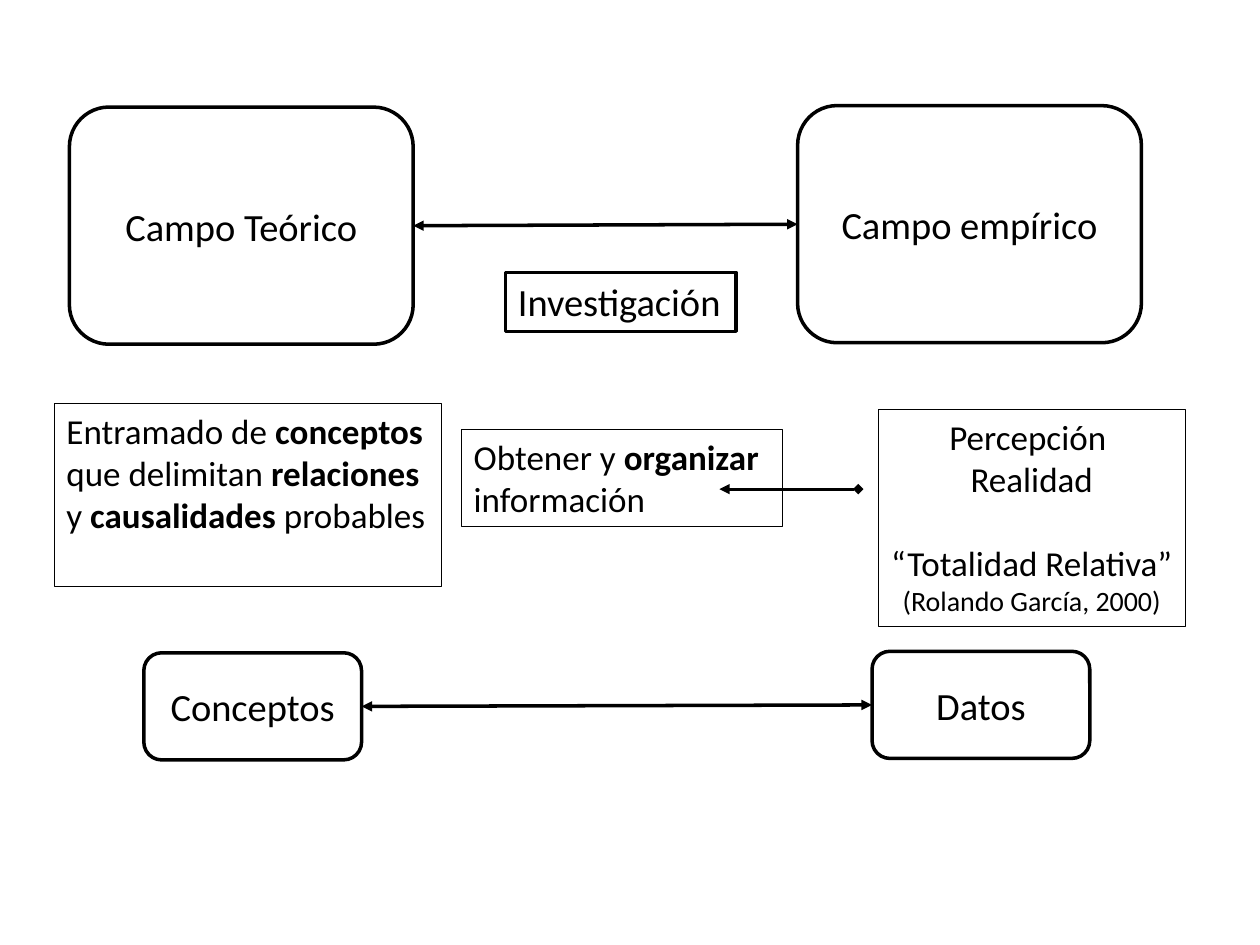
from lxml import etree
from pptx import Presentation, util as u
from pptx.dml.color import RGBColor
from pptx.enum import shapes, text
from pptx.oxml.ns import qn

COLORS = {"ink": "000000", "paper": "FFFFFF"}
FONT = "Calibri"
LEFT, CENTER = text.PP_ALIGN.LEFT, text.PP_ALIGN.CENTER


def rgb(name):
    return RGBColor.from_string(COLORS[name])


def apply(target, values):
    for name, value in values.items():
        setattr(target, name, value)


class Diagram:
    def __init__(self, s):
        self.s = s

    def box(self, kind, at, paragraphs, size, line=2, filled=True,
            align=CENTER, anchor=text.MSO_ANCHOR.TOP):
        sp = self.s.shapes.add_shape(kind, *(u.Cm(v) for v in at))
        sp.shadow.inherit = False
        if filled:
            sp.fill.solid()
            sp.fill.fore_color.rgb = rgb("paper")
        else:
            sp.fill.background()
        sp.line.color.rgb = rgb("ink")
        sp.line.width = u.Pt(line)
        tf = sp.text_frame
        apply(tf, {"word_wrap": True, "vertical_anchor": anchor})
        if align == LEFT:
            tf.margin_right = 0
        for i, runs in enumerate(paragraphs):
            p = tf.add_paragraph() if i else tf.paragraphs[0]
            p.alignment = align
            for content, bold in runs:
                r = p.add_run()
                r.text = content
                apply(r.font, {"name": FONT, "size": u.Pt(size), "bold": bold})
                r.font.color.rgb = rgb("ink")
        return sp

    def field(self, at, label):
        return self.box(shapes.MSO_SHAPE.ROUNDED_RECTANGLE, at, [[(label, False)]],
                        22, anchor=text.MSO_ANCHOR.MIDDLE)

    def note(self, at, paragraphs, align=LEFT):
        return self.box(shapes.MSO_SHAPE.RECTANGLE, at, paragraphs, 20,
                        line=0.25, filled=False, align=align)

    def arrow(self, start, end, width=2, head="triangle"):
        c = self.s.shapes.add_connector(
            shapes.MSO_CONNECTOR.STRAIGHT, *(u.Cm(v) for v in start + end))
        c.line.color.rgb = rgb("ink")
        c.line.width = u.Pt(width)
        ln = c.line._get_or_add_ln()
        for tag, kind in (("a:headEnd", head), ("a:tailEnd", "triangle")):
            etree.SubElement(ln, qn(tag), type=kind)
        etree.SubElement(c._element.spPr, qn("a:effectLst"))
        return c

    def link(self, left, right):
        c = self.arrow((0, 0), (1, 1))
        c.begin_connect(left, 3)
        c.end_connect(right, 1)


def main():
    prs = Presentation()
    apply(prs, {"slide_width": u.Cm(25.4), "slide_height": u.Cm(19.05)})
    d = Diagram(prs.slides.add_slide(prs.slide_layouts[6]))

    empirical = d.field((16.08, 2.13, 6.93, 4.78), "Campo empírico")
    theory = d.field((1.4, 2.16, 6.93, 4.78), "Campo Teórico")
    d.box(shapes.MSO_SHAPE.RECTANGLE, (10.19, 5.49, 4.65, 1.19),
          [[("Investigación", False)]], 22, align=LEFT)
    d.link(theory, empirical)

    d.note((1.09, 8.13, 7.8, 3.68), [
        [("Entramado de ", False), ("conceptos", True)],
        [("que delimitan ", False), ("relaciones", True)],
        [("y ", False), ("causalidades", True), (" probables", False)]])
    d.note((9.3, 8.66, 6.48, 1.96), [
        [("Obtener y ", False), ("organizar", True)],
        [("información", False)]])
    d.arrow((17.3, 9.86), (14.5, 9.86), width=1.75, head="diamond")
    reality = d.note((17.7, 8.26, 6.2, 4.37), [
        [(line, False)] for line in (
            "Percepción ", "Realidad", "“Totalidad Relativa”",
            "(Rolando García, 2000)")], align=CENTER)
    apply(reality.text_frame, {"margin_left": 0, "margin_right": 0})
    _, _, whole, citation = reality.text_frame.paragraphs
    whole.space_before = u.Pt(24)
    citation.runs[0].font.size = u.Pt(16)

    data = d.field((17.58, 13.13, 4.39, 2.16), "Datos")
    concepts = d.field((2.9, 13.16, 4.39, 2.16), "Conceptos")
    d.link(concepts, data)
    prs.save("out.pptx")


if __name__ == "__main__":
    main()
